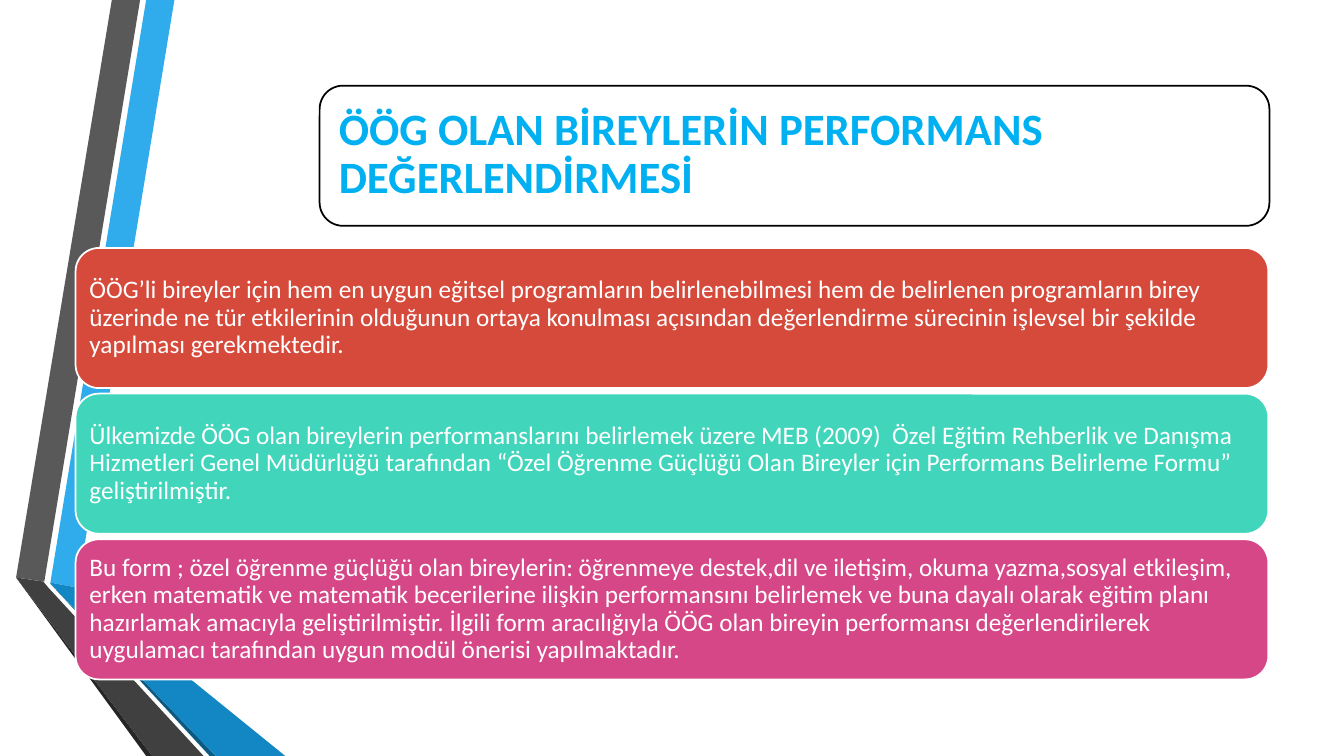
"""Builds the slide on performance assessment of individuals with learning difficulties."""
from pptx import Presentation
from pptx.dml.color import RGBColor
from pptx.enum.shapes import MSO_SHAPE
from pptx.enum.text import MSO_ANCHOR, MSO_AUTO_SIZE, PP_ALIGN
from pptx.util import Inches, Pt

ROUNDED = MSO_SHAPE.ROUNDED_RECTANGLE
MIDDLE = MSO_ANCHOR.MIDDLE
NO_AUTOFIT = MSO_AUTO_SIZE.NONE
LEFT = PP_ALIGN.LEFT


def paint(shape, fill, line=None):
    shape.shadow.inherit = False
    shape.fill.solid()
    shape.fill.fore_color.rgb = RGBColor.from_string(fill)
    if line:
        shape.line.color.rgb = RGBColor.from_string(line)
        shape.line.width = Pt(1.25)
    else:
        shape.line.fill.background()


def write(shape, text, size, color, inset, bold=False):
    frame = shape.text_frame
    frame.text = text
    frame.word_wrap = True
    frame.auto_size = NO_AUTOFIT
    frame.vertical_anchor = MIDDLE
    frame.margin_left = frame.margin_right = Inches(inset)
    frame.margin_top = frame.margin_bottom = Inches(inset)
    paragraph = frame.paragraphs[0]
    paragraph.alignment = LEFT
    paragraph.line_spacing = 0.9
    paragraph.space_before = Pt(0)
    paragraph.font.name = "Calibri"
    paragraph.font.size = Pt(size)
    paragraph.font.bold = bold
    paragraph.font.color.rgb = RGBColor.from_string(color)


prs = Presentation()
prs.slide_width = Inches(13.33)
prs.slide_height = Inches(7.5)
slide = prs.slides.add_slide(prs.slide_layouts[5])
shapes = slide.shapes

ribbons = [
    ("30ACEC", [(0.5, 5.78), (0.77, 5.83), (1.73, 0), (1.45, 0)]),
    ("595959", [(1.39, 0), (1.11, 0), (0.16, 5.73), (0.44, 5.77)]),
    ("262626", [(0.16, 5.73), (1.45, 7.5), (1.51, 7.5)]),
    ("0C5A82", [(0.5, 5.79), (2.08, 7.5), (2.14, 7.5)]),
    ("1287C3", [(0.5, 5.79), (2.14, 7.5), (2.83, 7.5), (0.77, 5.83), (0.5, 5.78)]),
    ("404040", [(2.02, 7.5), (0.48, 5.83), (0.43, 5.77), (0.16, 5.73), (1.51, 7.5)]),
]
for color, corners in ribbons:
    start, *rest = [(Inches(x), Inches(y)) for x, y in corners]
    outline = shapes.build_freeform(*start)
    outline.add_line_segments(rest, close=True)
    paint(outline.convert_to_shape(), color)

title_card = shapes.add_shape(ROUNDED, Inches(3.17), Inches(0.85), Inches(9.42), Inches(1.39))
paint(title_card, "FFFFFF", "000000")
title = shapes.title
title.left, title.top = Inches(3.23), Inches(0.91)
title.width, title.height = Inches(9.28), Inches(1.26)
write(title, "ÖÖG OLAN BİREYLERİN PERFORMANS DEĞERLENDİRMESİ", 32, "00B0F0", 0.13, bold=True)
title_card.element.addnext(title.element)

statements = [
    ("D64A3B", "ÖÖG’li bireyler için hem en uygun eğitsel programların belirlenebilmesi hem de "
               "belirlenen programların birey üzerinde ne tür etkilerinin olduğunun ortaya konulması "
               "açısından değerlendirme sürecinin işlevsel bir şekilde yapılması gerekmektedir."),
    ("41D6BC", "Ülkemizde ÖÖG olan bireylerin performanslarını belirlemek üzere MEB (2009)  Özel "
               "Eğitim Rehberlik ve Danışma Hizmetleri Genel Müdürlüğü tarafından “Özel Öğrenme "
               "Güçlüğü Olan Bireyler için Performans Belirleme Formu” geliştirilmiştir."),
    ("D64787", "Bu form ; özel öğrenme güçlüğü olan bireylerin: öğrenmeye destek,dil ve iletişim, "
               "okuma yazma,sosyal etkileşim, erken matematik ve matematik becerilerine ilişkin "
               "performansını belirlemek ve buna dayalı olarak eğitim planı hazırlamak amacıyla "
               "geliştirilmiştir. İlgili form aracılığıyla ÖÖG olan bireyin performansı "
               "değerlendirilerek uygulamacı tarafından uygun modül önerisi yapılmaktadır."),
]
for row, (color, statement) in enumerate(statements):
    top = Inches(2.46 + row * 1.445)
    card = shapes.add_shape(ROUNDED, Inches(0.75), top, Inches(11.83), Inches(1.39))
    paint(card, color, "FFFFFF")
    write(card, statement, 18, "FFFFFF", 0.07)

prs.save("out.pptx")
